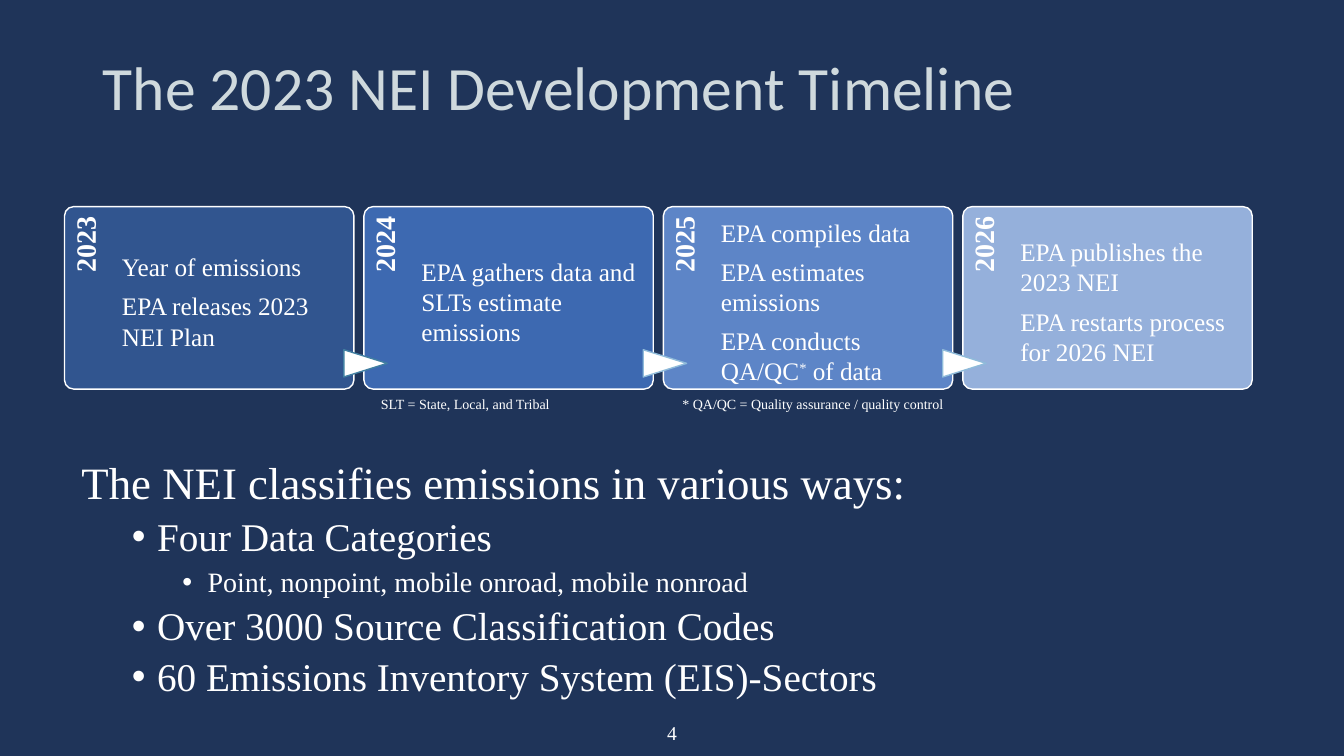
from dataclasses import dataclass

from lxml.etree import SubElement
from pptx import Presentation
from pptx.dml.color import RGBColor
from pptx.enum.shapes import MSO_SHAPE as Preset
from pptx.enum.text import MSO_ANCHOR as Anchor, PP_ALIGN as Align
from pptx.oxml.ns import qn
from pptx.shapes.autoshape import Shape
from pptx.slide import Slide
from pptx.text.text import TextFrame
from pptx.util import Inches, Pt

COLORS = {"background": "1F3459", "title": "CFD9DD", "white": "FFFFFF"}
SERIF = "Times New Roman"
INSETS = (0.1, 0.05, 0.1, 0.05)
CARD_LEFT, CARD_TOP, CARD_PITCH = 0.64, 2.05, 2.97
CARD_WIDTH, CARD_HEIGHT = 2.87, 1.81


@dataclass(frozen=True)
class Line:
    text: str
    size: float = 18
    color: str = COLORS["white"]
    font: str = SERIF
    bold: bool = False
    align: Align = Align.LEFT
    spacing: float = 1.0
    after: float = 0
    level: int = 0


@dataclass(frozen=True)
class Stage:
    year: str
    steps: tuple[str, ...]
    fill: str
    arrow_line: str = ""


@dataclass(frozen=True)
class Note:
    text: str
    left: float
    top: float
    width: float
    height: float
    size: float = 10
    align: Align = Align.LEFT


STAGES = (
    Stage("2023", ("Year of emissions", "EPA releases 2023 NEI Plan"), "31558F"),
    Stage("2024", ("EPA gathers data and SLTs estimate emissions",), "3D69B1", "417FA1"),
    Stage("2025", ("EPA compiles data", "EPA estimates emissions", "EPA conducts QA/QC* of data"),
          "5D85C7", "8FBBDA"),
    Stage("2026", ("EPA publishes the 2023 NEI", "EPA restarts process for 2026 NEI"),
          "95B0DB", "8FBBDA"),
)
BODY = (
    ("The NEI classifies emissions in various ways:", 32, 0),
    ("Four Data Categories", 28, 1),
    ("Point, nonpoint, mobile onroad, mobile nonroad", 20, 2),
    ("Over 3000 Source Classification Codes", 28, 1),
    ("60 Emissions Inventory System (EIS)-Sectors", 28, 1),
)
NOTES = (
    Note("* QA/QC = Quality assurance / quality control", 6.67, 3.87, 2.84, 0.27),
    Note("SLT = State, Local, and Tribal", 3.68, 3.87, 2.84, 0.27),
    Note("4", 6.26, 7.1, 0.81, 0.34, 14, Align.CENTER),
)


def write_lines(frame: TextFrame, lines: list[Line], anchor: Anchor = Anchor.TOP,
                insets: tuple[float, ...] = INSETS) -> None:
    """Fill a frame; an asterisk inside a line becomes a superscript."""
    frame.word_wrap = True
    frame.vertical_anchor = anchor
    for side, inset in zip(("left", "top", "right", "bottom"), insets):
        setattr(frame, f"margin_{side}", Inches(inset))
    for index, line in enumerate(lines):
        para = frame.add_paragraph() if index else frame.paragraphs[0]
        if line.level:
            add_bullet(para, line.level)
        layout = {"alignment": line.align, "line_spacing": line.spacing,
                  "space_before": Pt(0), "space_after": Pt(line.after)}
        for name, value in layout.items():
            setattr(para, name, value)
        before, mark, rest = line.text.partition("*")
        parts = (before, mark, rest) if before else (line.text,)
        for part in filter(None, parts):
            span = para.add_run()
            span.text = part
            style = {"name": line.font, "size": Pt(line.size), "bold": line.bold}
            for name, value in style.items():
                setattr(span.font, name, value)
            span.font.color.rgb = RGBColor.from_string(line.color)
            if part == "*":
                span._r.get_or_add_rPr().set("baseline", "30000")


def add_bullet(para, level: int) -> None:
    para.level = level
    properties = para._p.get_or_add_pPr()
    properties.set("marL", str(Inches(0.25 + 0.5 * level)))
    properties.set("indent", str(Inches(-0.25)))
    SubElement(properties, qn("a:buFont")).set("typeface", "Arial")
    SubElement(properties, qn("a:buChar")).set("char", "•")


def add_box(page: Slide, left: float, top: float, width: float, height: float) -> Shape:
    return page.shapes.add_textbox(Inches(left), Inches(top), Inches(width), Inches(height))


def add_preset(page: Slide, preset: Preset, left: float, top: float, width: float,
               height: float, fill: str, line: str) -> Shape:
    shape = page.shapes.add_shape(preset, Inches(left), Inches(top), Inches(width), Inches(height))
    shape.shadow.inherit = False
    shape.fill.solid()
    shape.fill.fore_color.rgb = RGBColor.from_string(fill)
    shape.line.color.rgb = RGBColor.from_string(line)
    shape.line.width = Pt(1)
    return shape


def add_stage(page: Slide, stage: Stage, left: float) -> None:
    card = add_preset(page, Preset.ROUNDED_RECTANGLE, left, CARD_TOP, CARD_WIDTH, CARD_HEIGHT,
                      stage.fill, COLORS["white"])
    card.adjustments[0] = 0.05
    year = add_box(page, left - 0.46, 2.51, 1.49, 0.57)
    year.rotation = 270
    write_lines(year.text_frame, [Line(stage.year, 20, bold=True, align=Align.RIGHT, spacing=0.9)],
                insets=(0, 0.07, 0.1, 0))
    if stage.arrow_line:
        arrow = add_preset(page, Preset.FLOWCHART_EXTRACT, left - 0.12, 3.39, 0.27, 0.43,
                           COLORS["white"], stage.arrow_line)
        arrow.rotation = 90
    steps = add_box(page, left + 0.57, CARD_TOP, 2.14, CARD_HEIGHT)
    write_lines(steps.text_frame, [Line(step, after=6.3) for step in stage.steps],
                Anchor.MIDDLE, (0, 0.07, 0, 0))


def main() -> None:
    deck = Presentation()
    deck.slide_width, deck.slide_height = Inches(13.33), Inches(7.5)
    page = deck.slides.add_slide(deck.slide_layouts[5])
    page.background.fill.solid()
    page.background.fill.fore_color.rgb = RGBColor.from_string(COLORS["background"])

    title = page.shapes.title
    place = {"left": 0.92, "top": 0.4, "width": 11.5, "height": 1}
    for name, value in place.items():
        setattr(title, name, Inches(value))
    heading = Line("The 2023 NEI Development Timeline", 44, COLORS["title"], "Calibri", spacing=0.9)
    write_lines(title.text_frame, [heading], Anchor.MIDDLE)

    for index, stage in enumerate(STAGES):
        add_stage(page, stage, CARD_LEFT + index * CARD_PITCH)

    body = add_box(page, 0.71, 4.52, 11.91, 2.42)
    write_lines(body.text_frame, [Line(text, size, spacing=0.9, after=6, level=level)
                                  for text, size, level in BODY])
    for note in NOTES:
        box = add_box(page, note.left, note.top, note.width, note.height)
        write_lines(box.text_frame, [Line(note.text, note.size, align=note.align)])
    deck.save("out.pptx")


if __name__ == "__main__":
    main()
